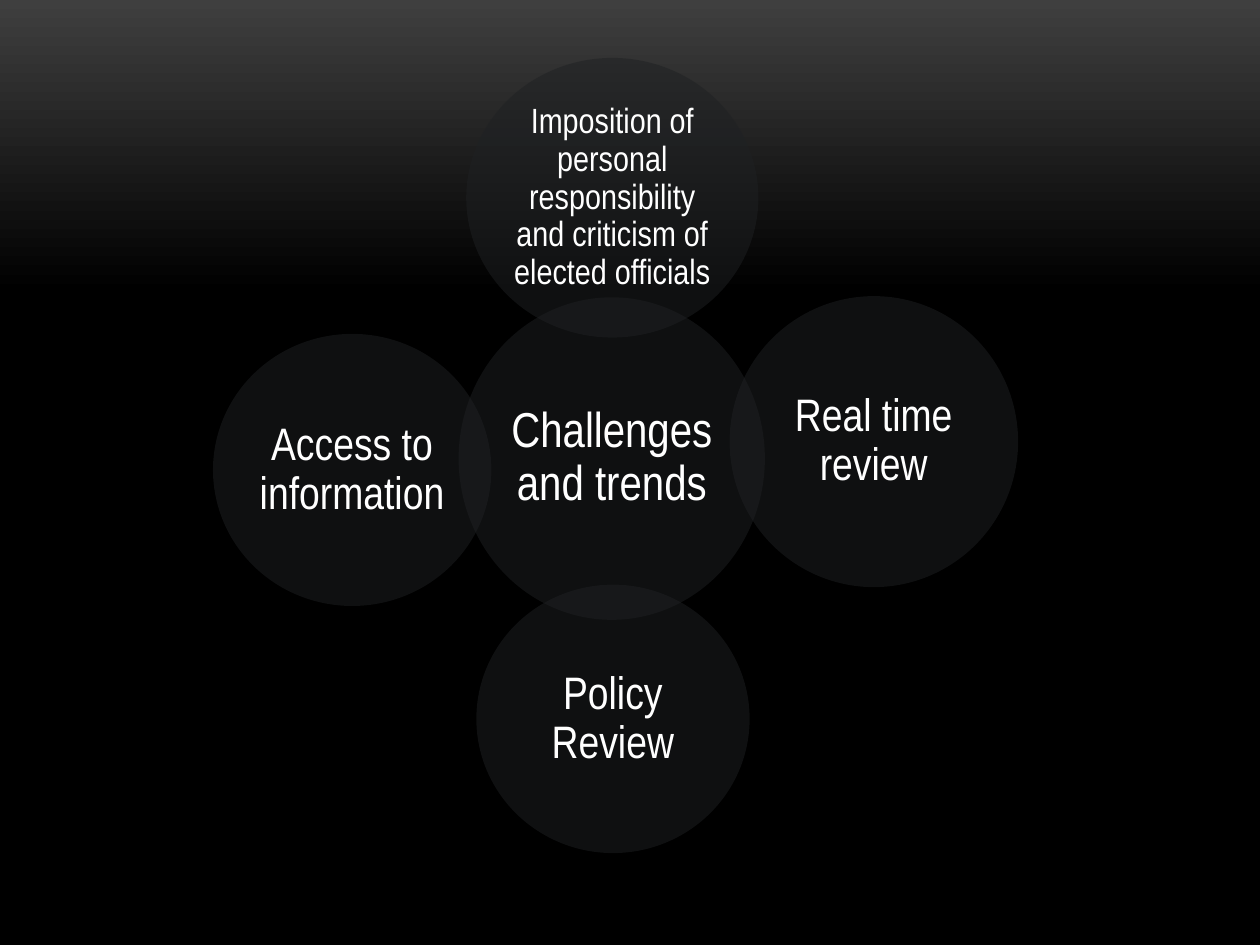
from lxml import etree
from pptx import Presentation
from pptx.dml.color import RGBColor
from pptx.enum.shapes import MSO_SHAPE
from pptx.enum.text import MSO_ANCHOR, PP_ALIGN
from pptx.oxml.ns import qn
from pptx.util import Pt

OVAL = MSO_SHAPE.OVAL
MIDDLE = MSO_ANCHOR.MIDDLE
CENTER = PP_ALIGN.CENTER

BLACK = RGBColor(0x00, 0x00, 0x00)
GRAY = RGBColor(0x3F, 0x3F, 0x3F)
CHARCOAL = RGBColor(0x1F, 0x21, 0x23)
WHITE = RGBColor(0xFF, 0xFF, 0xFF)

# Left, top, width, height and font size in points
CIRCLES = [
    ("Challenges and trends", 262.1, 169.9, 175, 184.3, 28),
    ("Imposition of personal responsibility and criticism of elected officials",
     266.4, 33.1, 167, 159.8, 20),
    ("Real time review", 416.9, 169.2, 164.9, 166.3, 26),
    ("Policy Review", 272.2, 334.1, 156.2, 153.4, 26),
    ("Access to information", 121.7, 190.8, 159.1, 155.5, 26),
]


def write_text(frame, text, *, size, font="Arial Narrow", color=WHITE,
               align=CENTER, anchor=MIDDLE, line_spacing=0.9):
    """Fill a text frame, with insets of a tenth of the font size."""
    frame.word_wrap = True
    frame.vertical_anchor = anchor
    frame.margin_left = frame.margin_right = Pt(size / 10)
    frame.margin_top = frame.margin_bottom = Pt(size / 10)
    para = frame.paragraphs[0]
    para.alignment = align
    para.line_spacing = line_spacing
    span = para.add_run()
    span.text = text
    span.font.name = font
    span.font.size = Pt(size)
    span.font.color.rgb = color


class VennSlide:
    def __init__(self, page, fill=CHARCOAL, opacity=50):
        self.page = page
        self.fill = fill
        self.opacity = opacity
        self.group = page.shapes.add_group_shape()

    def background(self, top, bottom, end):
        """Fade from top to bottom colour, reaching the latter at end."""
        fill = self.page.background.fill
        fill.gradient()
        fill.gradient_angle = 270
        for stop, color, position in zip(fill.gradient_stops, (top, bottom), (0, end)):
            stop.color.rgb = color
            stop.position = position

    def circle(self, text, left, top, width, height, size):
        shape = self.group.shapes.add_shape(
            OVAL, Pt(left), Pt(top), Pt(width), Pt(height))
        shape.shadow.inherit = False
        shape.line.fill.background()
        shape.fill.solid()
        shape.fill.fore_color.rgb = self.fill
        color = shape.fill._xPr.find(qn("a:solidFill")).find(qn("a:srgbClr"))
        etree.SubElement(color, qn("a:alpha"), val=str(self.opacity * 1000))
        write_text(shape.text_frame, text, size=size)


def main():
    deck = Presentation()
    deck.slide_width, deck.slide_height = Pt(720), Pt(540)
    venn = VennSlide(deck.slides.add_slide(deck.slide_layouts[6]))
    venn.background(GRAY, BLACK, 0.31)
    for circle in CIRCLES:
        venn.circle(*circle)
    deck.save("out.pptx")


if __name__ == "__main__":
    main()
